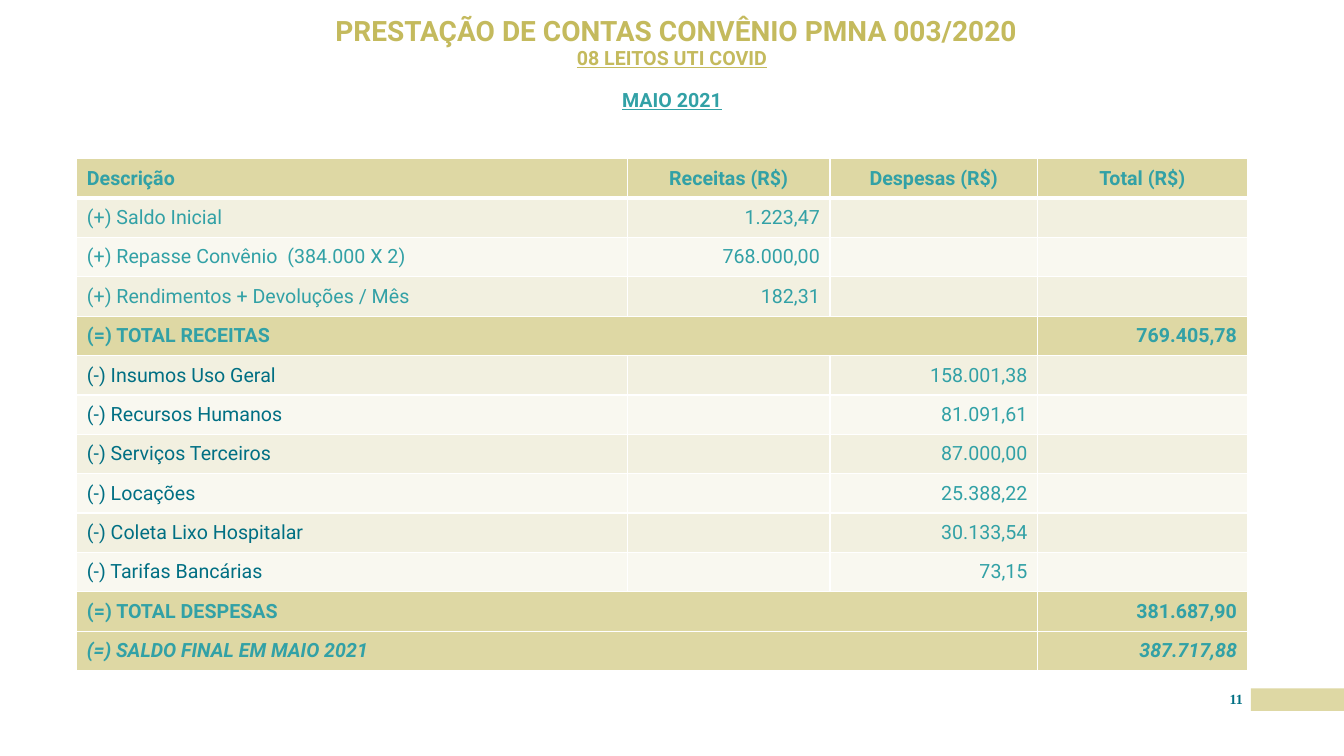
"""Build the May 2021 statement of accounts slide for the COVID ICU agreement."""
from lxml import etree
from pptx import Presentation
from pptx.dml.color import RGBColor
from pptx.enum.shapes import MSO_SHAPE as Shape
from pptx.enum.text import MSO_ANCHOR as Anchor, PP_ALIGN as Align
from pptx.oxml.ns import qn
from pptx.util import Pt

WHITE = RGBColor(0xFF, 0xFF, 0xFF)
GOLD = RGBColor(0xC4, 0xBA, 0x5D)
SAND = RGBColor(0xDE, 0xD8, 0xA4)
CREAM = RGBColor(0xF2, 0xF0, 0xE0)
IVORY = RGBColor(0xF9, 0xF8, 0xF0)
TEAL = RGBColor(0x32, 0xA1, 0xA6)
PETROL = RGBColor(0x00, 0x6F, 0x83)

COLUMN_WIDTHS = (393.3, 144.7, 148.3, 149.7)
ROW_HEIGHT = 28.14
HEADINGS = ("Descrição", "Receitas (R$)", "Despesas (R$)", "Total (R$)")
INCOME = (
    ("(+) Saldo Inicial", "1.223,47"),
    ("(+) Repasse Convênio  (384.000 X 2)", "768.000,00"),
    ("(+) Rendimentos + Devoluções / Mês", "182,31"),
)
EXPENSES = (
    ("(-) Insumos Uso Geral", "158.001,38"),
    ("(-) Recursos Humanos", "81.091,61"),
    ("(-) Serviços Terceiros", "87.000,00"),
    ("(-) Locações", "25.388,22"),
    ("(-) Coleta Lixo Hospitalar", "30.133,54"),
    ("(-) Tarifas Bancárias", "73,15"),
)


def write(paragraph, text, size=14, color=TEAL, bold=False, italic=False,
          underline=False, align=Align.LEFT, font="Roboto"):
    paragraph.alignment = align
    run = paragraph.add_run()
    run.text = text
    style = run.font
    style.name, style.size = font, Pt(size)
    style.bold, style.italic, style.underline = bold, italic, underline
    style.color.rgb = color


class Statement:
    def __init__(self, slide):
        self.slide = slide

    def bar(self, left, top, width, height, color):
        bar = self.slide.shapes.add_shape(
            Shape.RECTANGLE, Pt(left), Pt(top), Pt(width), Pt(height))
        bar.shadow.inherit = False
        bar.fill.solid()
        bar.fill.fore_color.rgb = color
        bar.line.fill.background()

    def text_frame(self, left, top, width, height):
        frame = self.slide.shapes.add_textbox(
            Pt(left), Pt(top), Pt(width), Pt(height)).text_frame
        frame.word_wrap = True
        frame.vertical_anchor = Anchor.TOP
        frame.margin_left = frame.margin_right = Pt(0)
        frame.margin_top = frame.margin_bottom = Pt(0)
        return frame

    def heading(self):
        frame = self.text_frame(0, 8.6, 960, 109.4)
        title = frame.paragraphs[0]
        subtitle, month = frame.add_paragraph(), frame.add_paragraph()
        month.space_before = Pt(14.8)
        for line in frame.paragraphs:
            line.line_spacing = 0.9
        centred = {"bold": True, "align": Align.CENTER}
        write(title, " ", size=24, color=GOLD, **centred)
        write(title, "PRESTAÇÃO DE CONTAS CONVÊNIO PMNA 003/2020",
              size=20, color=GOLD, **centred)
        write(subtitle, "08 LEITOS UTI COVID", color=GOLD, underline=True, **centred)
        write(month, "MAIO 2021", underline=True, **centred)

    def page_number(self, number):
        frame = self.text_frame(872.6, 493.2, 20.9, 18)
        write(frame.paragraphs[0], number, size=10, color=PETROL, bold=True,
              align=Align.CENTER, font="Times New Roman")

    def cell(self, cell, text, fill, bottom=1, **style):
        borders = cell._tc.get_or_add_tcPr()
        for side, width in (("L", 1), ("R", 1), ("T", 1), ("B", bottom)):
            line = etree.SubElement(borders, qn(f"a:ln{side}"), w=str(Pt(width)))
            solid = etree.SubElement(line, qn("a:solidFill"))
            etree.SubElement(solid, qn("a:srgbClr"), val=str(WHITE))
        cell.fill.solid()
        cell.fill.fore_color.rgb = fill
        cell.vertical_anchor = Anchor.MIDDLE
        cell.margin_top = cell.margin_bottom = Pt(2)
        if text:
            write(cell.text_frame.paragraphs[0], text, **style)

    def entries(self, table, first_row, entries, amount_column, color):
        for offset, (description, amount) in enumerate(entries):
            fill = IVORY if offset % 2 else CREAM
            for column, cell in enumerate(table.rows[first_row + offset].cells):
                if column == 0:
                    self.cell(cell, description, fill, color=color)
                else:
                    value = amount if column == amount_column else ""
                    self.cell(cell, value, fill, align=Align.RIGHT)

    def total(self, table, row, description, amount, italic=False):
        table.cell(row, 0).merge(table.cell(row, 2))
        for cell, text, align in zip(table.rows[row].cells,
                                     (description, "", "", amount),
                                     (Align.LEFT,) * 3 + (Align.RIGHT,)):
            self.cell(cell, text, SAND, bold=True, italic=italic, align=align)

    def accounts(self):
        income_total = len(INCOME) + 1
        expense_total = income_total + len(EXPENSES) + 1
        rows = expense_total + 2
        table = self.slide.shapes.add_table(
            rows, len(HEADINGS), Pt(54.9), Pt(113.4),
            Pt(sum(COLUMN_WIDTHS)), Pt(rows * ROW_HEIGHT)).table
        for column, width in zip(table.columns, COLUMN_WIDTHS):
            column.width = Pt(width)
        for row in table.rows:
            row.height = Pt(ROW_HEIGHT)
        for column, heading in enumerate(HEADINGS):
            self.cell(table.cell(0, column), heading, SAND, bottom=3, bold=True,
                      align=Align.CENTER if column else Align.LEFT)
        self.entries(table, 1, INCOME, 1, TEAL)
        self.total(table, income_total, "(=) TOTAL RECEITAS", "769.405,78")
        self.entries(table, income_total + 1, EXPENSES, 2, PETROL)
        self.total(table, expense_total, "(=) TOTAL DESPESAS", "381.687,90")
        self.total(table, expense_total + 1, "(=) SALDO FINAL EM MAIO 2021",
                   "387.717,88", italic=True)


def main():
    deck = Presentation()
    deck.slide_width, deck.slide_height = Pt(960), Pt(540)
    statement = Statement(deck.slides.add_slide(deck.slide_layouts[6]))
    statement.bar(893.6, 491.8, 66.4, 16, SAND)
    statement.page_number("11")
    statement.heading()
    statement.accounts()
    deck.save("out.pptx")


if __name__ == "__main__":
    main()
